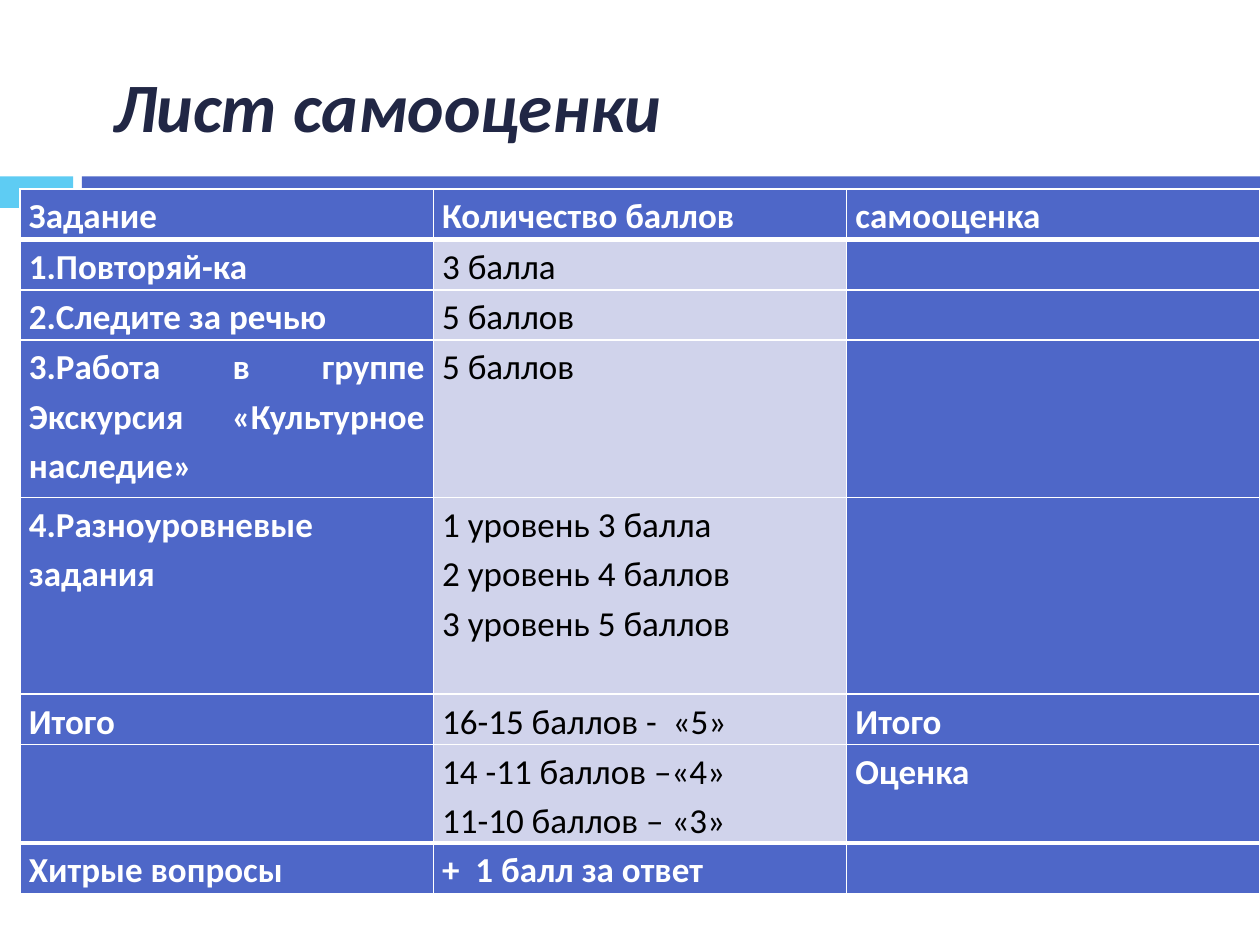
import pptx
import pptx.dml.color
import pptx.enum.shapes
import pptx.enum.text
import pptx.oxml
import pptx.oxml.ns
import pptx.util
from pptx.util import Inches

BLUE, CYAN, NAVY = "4E67C8", "5ECCF3", "212745"
PALE, WHITE, BLACK = "D0D3EB", "FFFFFF", "000000"

COLUMN_WIDTH = 3.28
ROW_HEIGHTS = [0.4, 0.4, 0.4, 1.25, 1.56, 0.4, 0.78, 0.4]
SCORE_ROWS = [
    ("Задание ", "Количество баллов", "самооценка"),
    ("1.Повторяй-ка", "3 балла", ""),
    ("2.Следите за речью", "5 баллов", ""),
    ("3.Работа в группе Экскурсия «Культурное наследие»", "5 баллов", ""),
    ("4.Разноуровневые задания",
     "1 уровень 3 балла\n2 уровень 4 баллов\n3 уровень 5 баллов", ""),
    ("Итого", "16-15 баллов -  «5»", "Итого"),
    ("", "14 -11 баллов –«4»\n11-10 баллов – «3»", "Оценка"),
    ("Хитрые вопросы", "+  1 балл за ответ", ""),
]


def color(hex_value):
    return pptx.dml.color.RGBColor.from_string(hex_value)


class SlideBuilder:
    font_name = "Calibri"

    def __init__(self, slide):
        self.slide = slide

    def bar(self, left, top, width, height, fill):
        bar = self.slide.shapes.add_shape(
            pptx.enum.shapes.MSO_SHAPE.RECTANGLE,
            Inches(left), Inches(top), Inches(width), Inches(height))
        bar.shadow.inherit = False
        bar.fill.solid()
        bar.fill.fore_color.rgb = color(fill)
        bar.line.fill.background()

    def run(self, paragraph, text, size, hex_value, bold=False, italic=False):
        run = paragraph.add_run()
        run.text = text
        font = run.font
        font.name, font.size = self.font_name, pptx.util.Pt(size)
        font.bold, font.italic = bold, italic
        font.color.rgb = color(hex_value)

    def title(self, text, left, top, width, height):
        frame = self.slide.shapes.add_textbox(
            Inches(left), Inches(top), Inches(width), Inches(height)).text_frame
        frame.word_wrap = True
        frame.margin_left = frame.margin_right = 0
        frame.vertical_anchor = pptx.enum.text.MSO_ANCHOR.MIDDLE
        self.run(frame.paragraphs[0], text, 39.6, NAVY, bold=True, italic=True)

    def borders(self, cell, top, bottom):
        """Draw white cell edges; top and bottom are widths in points."""
        properties = cell._tc.get_or_add_tcPr()
        for side, width in (("L", 1), ("R", 1), ("T", top), ("B", bottom)):
            properties.append(pptx.oxml.parse_xml(
                f'<a:ln{side} {pptx.oxml.ns.nsdecls("a")} w="{pptx.util.Pt(width)}">'
                f'<a:solidFill><a:srgbClr val="{WHITE}"/></a:solidFill></a:ln{side}>'))

    def cell(self, cell, text, fill, text_color, bold):
        cell.fill.solid()
        cell.fill.fore_color.rgb = color(fill)
        cell.margin_left = cell.margin_right = Inches(0.07)
        cell.margin_top = cell.margin_bottom = 0
        for index, line in enumerate(text.split("\n") if text else []):
            frame = cell.text_frame
            paragraph = frame.add_paragraph() if index else frame.paragraphs[0]
            paragraph.alignment = pptx.enum.text.PP_ALIGN.JUSTIFY
            paragraph.line_spacing = 1.15
            self.run(paragraph, line, 20, text_color, bold)

    def score_table(self, left, top):
        columns, last = len(SCORE_ROWS[0]), len(SCORE_ROWS) - 1
        table = self.slide.shapes.add_table(
            len(SCORE_ROWS), columns, Inches(left), Inches(top),
            Inches(COLUMN_WIDTH * columns), Inches(sum(ROW_HEIGHTS))).table
        for column in table.columns:
            column.width = Inches(COLUMN_WIDTH)
        for r, (texts, height) in enumerate(zip(SCORE_ROWS, ROW_HEIGHTS)):
            table.rows[r].height = Inches(height)
            for c, text in enumerate(texts):
                cell = table.cell(r, c)
                self.borders(cell, top=3 if r in (1, last) else 1,
                             bottom=3 if r in (0, last - 1) else 1)
                if c == 1 and 0 < r < last:
                    self.cell(cell, text, PALE, BLACK, bold=False)
                else:
                    self.cell(cell, text, BLUE, WHITE, bold=True)


def main():
    deck = pptx.Presentation()
    deck.slide_width, deck.slide_height = Inches(10), Inches(7.5)
    builder = SlideBuilder(deck.slides.add_slide(deck.slide_layouts[6]))
    builder.bar(0, 1.4, 0.58, 0.25, CYAN)
    builder.bar(0.65, 1.4, 9.35, 0.25, BLUE)
    builder.title("Лист самооценки", 0.9, 0.29, 8.69, 1.08)
    builder.score_table(0.16, 1.5)
    deck.save("out.pptx")


if __name__ == "__main__":
    main()
